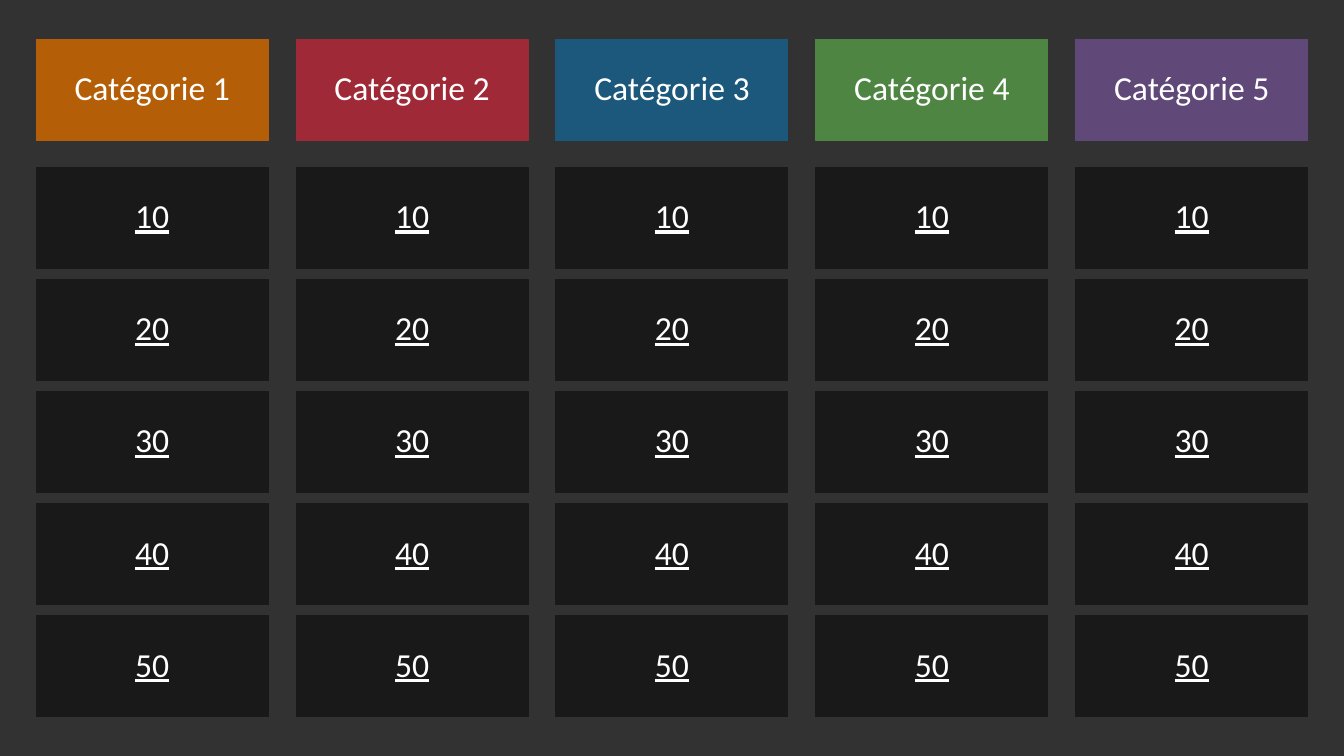
from dataclasses import dataclass

from pptx import Presentation
from pptx.dml.color import RGBColor
from pptx.enum import shapes, text
from pptx.util import Inches, Pt


@dataclass(frozen=True)
class Theme:
    background: str = "323232"
    tile: str = "191919"
    ink: str = "FFFFFF"
    categories: tuple = ("B45F07", "9F2936", "1B587C", "4E8542", "604878")
    font: str = "Calibri"
    size: float = 24
    line_width: float = 0.75
    line_spacing: float = 0.9


THEME = Theme()
POINTS = (10, 20, 30, 40, 50)
BOX_WIDTH, BOX_HEIGHT = 2.3, 1
FIRST_LEFT, LAST_LEFT = 0.36, 10.67
HEADER_TOP = 0.39
FIRST_TOP, LAST_TOP = 1.66, 6.11


def spread(first, last, count):
    step = (last - first) / (count - 1)
    return [first + step * index for index in range(count)]


def add_box(page, left, top, label, fill, underline=False):
    box = page.shapes.add_shape(
        shapes.MSO_SHAPE.RECTANGLE,
        Inches(left), Inches(top), Inches(BOX_WIDTH), Inches(BOX_HEIGHT),
    )
    box.shadow.inherit = False
    color = RGBColor.from_string(fill)
    box.fill.solid()
    box.fill.fore_color.rgb = color
    box.line.color.rgb = color
    box.line.width = Pt(THEME.line_width)
    frame = box.text_frame
    frame.word_wrap = True
    frame.vertical_anchor = text.MSO_ANCHOR.MIDDLE
    para = frame.paragraphs[0]
    para.text = label
    para.alignment = text.PP_ALIGN.CENTER
    para.line_spacing = THEME.line_spacing
    para.font.name = THEME.font
    para.font.size = Pt(THEME.size)
    para.font.color.rgb = RGBColor.from_string(THEME.ink)
    para.font.underline = underline


def add_category(page, left, number, color):
    add_box(page, left, HEADER_TOP, f"Catégorie {number}", color)
    for top, points in zip(spread(FIRST_TOP, LAST_TOP, len(POINTS)), POINTS):
        add_box(page, left, top, str(points), THEME.tile, underline=True)


def main():
    deck = Presentation()
    deck.slide_width, deck.slide_height = Inches(13.33), Inches(7.5)
    page = deck.slides.add_slide(deck.slide_layouts.get_by_name("Blank"))
    page.background.fill.solid()
    page.background.fill.fore_color.rgb = RGBColor.from_string(THEME.background)
    lefts = spread(FIRST_LEFT, LAST_LEFT, len(THEME.categories))
    for number, (left, color) in enumerate(zip(lefts, THEME.categories), start=1):
        add_category(page, left, number, color)
    deck.save("out.pptx")


if __name__ == "__main__":
    main()
